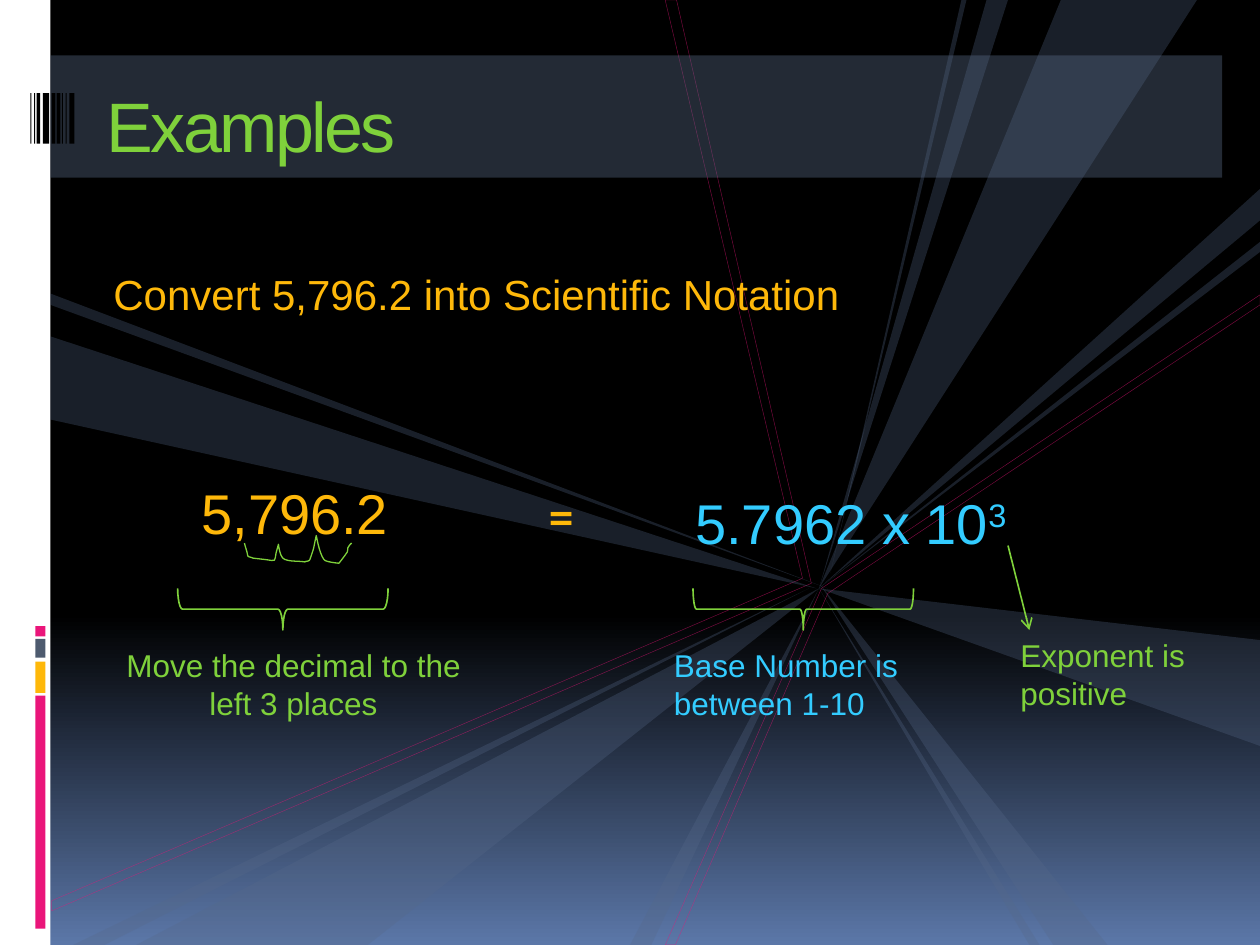
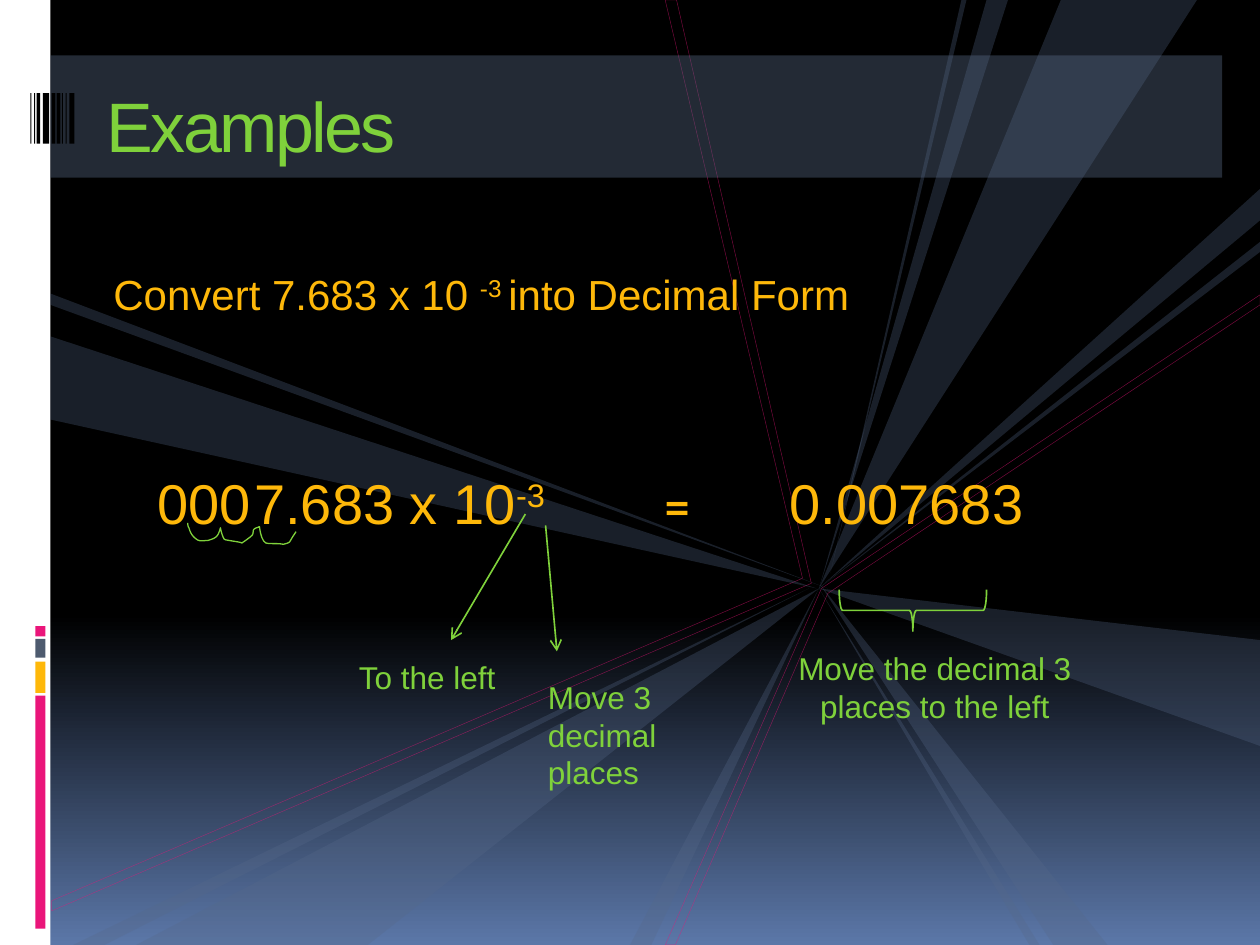
from dataclasses import dataclass

import pptx
import pptx.dml.color
import pptx.enum.shapes
import pptx.enum.text
import pptx.oxml
import pptx.oxml.ns
import pptx.util
from pptx.util import Inches

SHAPE = pptx.enum.shapes.MSO_SHAPE
ALIGN = pptx.enum.text.PP_ALIGN
ANCHOR = pptx.enum.text.MSO_ANCHOR


@dataclass(frozen=True)
class Theme:
    black: str = "000000"
    white: str = "FFFFFF"
    dusk: str = "5B77A8"
    pink: str = "EA157A"
    amber: str = "FEB80A"
    slate: str = "4E5B6F"
    ray: str = "566989"
    band: str = "586A86"
    green: str = "7FD13B"
    sky: str = "33CCFF"
    font: str = "Arial"
    sign_font: str = "Cabin"
    title: int = 40
    number: int = 32
    task: int = 24
    label: int = 18


THEME = Theme()
HUB = (6.5, 4.67)
# The two outer points of each wedge of light, then the point it narrows to
RAYS = [
    ((7.67, 0), (7.63, 0), (6.59, 4.55)),
    ((8.42, 0), (9.5, 0), HUB),
    ((10, 5.08), (10, 5.92), HUB),
    ((8, 0), (7.83, 0), HUB),
    ((8.36, 7.5), (8.79, 7.5), (6.51, 4.64)),
    ((8.25, 7.5), (8.17, 7.5), HUB),
    ((10, 1.5), (10, 1.75), HUB),
    ((10, 1.92), (10, 2), HUB),
    ((1.08, 7.5), (2.92, 7.5), HUB),
    ((0.58, 7.5), (0.83, 7.5), (6.42, 4.67)),
    ((0.4, 2.67), (0.4, 3.33), (6.48, 4.67)),
    ((0.4, 2.33), (0.4, 2.42), (6.57, 4.67)),
    ((5, 7.5), (5.17, 7.5), HUB),
]
PINK_OUTLINES = [
    [(5.28, 7.5), (6.52, 4.67), (10, 2.34), (10, 2.42), (6.57, 4.71), (5.36, 7.5)],
    [(0.41, 7.15), (0.41, 7.23), (6.44, 4.63), (5.37, 0), (5.28, 0), (6.37, 4.59)],
]
SIDE_BLOCKS = [  # top, height, colour
    (5.52, 1.85, THEME.pink),
    (5.25, 0.25, THEME.amber),
    (5.07, 0.15, THEME.slate),
    (4.97, 0.08, THEME.pink),
]
BARCODE = [  # left, width
    (0.24, 0.01), (0.27, 0.01), (0.29, 0.03), (0.34, 0.05), (0.41, 0.03),
    (0.45, 0.03), (0.49, 0.01), (0.52, 0.01), (0.55, 0.04),
]
# Bezier chains: a start point, then three points for each curve
HOPS_LEFT = [
    (2.79, 4.31), (2.78, 4.32), (2.77, 4.33), (2.76, 4.35),
    (2.76, 4.36), (2.76, 4.38), (2.75, 4.39), (2.73, 4.42), (2.69, 4.47), (2.69, 4.47),
    (2.68, 4.47), (2.58, 4.46), (2.57, 4.44), (2.54, 4.4), (2.52, 4.3), (2.51, 4.25),
    (2.48, 4.39), (2.5, 4.32), (2.46, 4.44), (2.45, 4.46), (2.43, 4.45), (2.42, 4.46),
    (2.37, 4.45), (2.31, 4.46), (2.26, 4.44), (2.22, 4.43), (2.21, 4.32), (2.21, 4.32),
    (2.15, 4.49), (2.25, 4.45), (2.01, 4.43), (1.96, 4.41), (1.97, 4.43), (1.96, 4.38),
    (1.95, 4.35), (1.94, 4.31), (1.94, 4.31),
]
HOPS_ZEROS = [
    (2.35, 4.22), (2.28, 4.32), (2.32, 4.3), (2.25, 4.32),
    (2.2, 4.31), (2.15, 4.32), (2.11, 4.31), (2.07, 4.29), (2.06, 4.18), (2.06, 4.18),
    (2.04, 4.19), (2.02, 4.19), (2.01, 4.21), (2.01, 4.22), (2.01, 4.24), (2, 4.25),
    (1.98, 4.27), (1.92, 4.31), (1.92, 4.31), (1.91, 4.3), (1.79, 4.29), (1.78, 4.28),
    (1.76, 4.25), (1.75, 4.19), (1.75, 4.19), (1.73, 4.26), (1.72, 4.27), (1.65, 4.29),
    (1.62, 4.29), (1.58, 4.3), (1.56, 4.28), (1.53, 4.26), (1.51, 4.23), (1.5, 4.19),
    (1.49, 4.18), (1.49, 4.15), (1.49, 4.15),
]


def rgb(code):
    return pptx.dml.color.RGBColor.from_string(code)


def add_child(parent, tag, **attributes):
    child = pptx.oxml.parse_xml(f"<{tag} {pptx.oxml.ns.nsdecls('a')}/>")
    for name, value in attributes.items():
        child.set(name, str(value))
    parent.append(child)


def set_opacity(parent, percent):
    """Make the one solid colour found under parent translucent."""
    color = next(parent.iter(pptx.oxml.ns.qn("a:srgbClr")))
    add_child(color, "a:alpha", val=percent * 1000)


def curve_points(chain, steps=6):
    """Return points along a chain of cubic Bezier curves."""
    points = [chain[0]]
    for first in range(0, len(chain) - 1, 3):
        a, b, c, d = chain[first:first + 4]
        for step in range(1, steps + 1):
            t = step / steps
            u = 1 - t
            weights = (u ** 3, 3 * u * u * t, 3 * u * t * t, t ** 3)
            points.append(tuple(
                sum(weight * value for weight, value in zip(weights, axis))
                for axis in zip(a, b, c, d)))
    return points


class SlideBuilder:
    def __init__(self, deck, theme):
        self.deck = deck
        self.theme = theme
        self.page = None

    def paint_background(self):
        fill = self.deck.slide_master.background.fill
        fill.gradient()
        fill.gradient_angle = 270
        stops = ((0.65, self.theme.black), (1, self.theme.dusk))
        for stop, (position, color) in zip(fill.gradient_stops, stops):
            stop.position = position
            stop.color.rgb = rgb(color)

    def start_page(self, task):
        """Add a slide with the shared decoration, the title and the task line."""
        theme = self.theme
        self.page = self.deck.slides.add_slide(self.deck.slide_layouts[6])
        self.bar(0, 0, 0.4, 7.5, theme.white)
        for top, height, color in SIDE_BLOCKS:
            self.bar(0.28, top, 0.08, height, color)
        for points in PINK_OUTLINES:
            self.outline(points, theme.pink, 0.25, close=True, opacity=53)
        for points in RAYS:
            self.wedge(points)
        self.bar(0.4, 0.44, 9.3, 0.97, theme.band, opacity=40)
        for left, width in BARCODE:
            self.bar(left, 0.74, width, 0.4, theme.black)

        box = self.text(0.75, 2.08, 8.31, 1.07, task, theme.task, theme.amber)
        box.text_frame.margin_left = Inches(0.15)
        box.text_frame.margin_bottom = 0
        box.text_frame.paragraphs[0].space_before = pptx.util.Pt(7)

        box = self.text(0.75, 0.58, 8.92, 0.85, "Examples", theme.title, theme.green)
        box.text_frame.margin_top = Inches(0.02)
        box.text_frame.vertical_anchor = ANCHOR.MIDDLE
        span = box.text_frame.paragraphs[0].runs[0]
        span._r.get_or_add_rPr().set("spc", "-150")

    def bar(self, left, top, width, height, color, opacity=None):
        shape = self.page.shapes.add_shape(
            SHAPE.RECTANGLE, Inches(left), Inches(top), Inches(width), Inches(height))
        self.paint(shape, color, opacity)

    def paint(self, shape, color, opacity=None):
        shape.shadow.inherit = False
        shape.line.fill.background()
        shape.fill.solid()
        shape.fill.fore_color.rgb = rgb(color)
        if opacity:
            set_opacity(shape._element.spPr, opacity)

    def stroke(self, shape, color, width, opacity=None):
        shape.line.color.rgb = rgb(color)
        shape.line.width = pptx.util.Pt(width)
        if opacity:
            set_opacity(shape._element.spPr, opacity)

    def freeform(self, points, close):
        """Build an outline; the builder keeps whole units only, so use Inches."""
        start, *rest = [(Inches(x), Inches(y)) for x, y in points]
        builder = self.page.shapes.build_freeform(*start)
        builder.add_line_segments(rest, close=close)
        return builder.convert_to_shape()

    def wedge(self, points):
        self.paint(self.freeform(points, close=True), self.theme.ray, 30)

    def outline(self, points, color, width, close=False, opacity=None):
        shape = self.freeform(points, close)
        shape.shadow.inherit = False
        shape.fill.background()
        self.stroke(shape, color, width, opacity)

    def hops(self, chain):
        """Draw the hand-made loops that count the decimal places."""
        self.outline(curve_points(chain), self.theme.green, 0.75)

    def brace(self, left, top, width, curl=0.083):
        """Draw a brace that opens upward, given its visible left, top and width."""
        depth = 0.33
        shape = self.page.shapes.add_shape(
            SHAPE.RIGHT_BRACE, Inches(left + (width - depth) / 2),
            Inches(top + (depth - width) / 2), Inches(depth), Inches(width))
        shape.rotation = 90
        shape.adjustments[0] = curl
        shape.shadow.inherit = False
        shape.fill.background()
        self.stroke(shape, self.theme.green, 0.94)

    def arrow(self, start, end):
        connector = self.page.shapes.add_connector(
            pptx.enum.shapes.MSO_CONNECTOR.STRAIGHT,
            *(Inches(value) for value in (*start, *end)))
        self.stroke(connector, self.theme.green, 0.94)
        add_child(connector.line._get_or_add_ln(), "a:tailEnd", type="arrow")
        add_child(connector._element.spPr, "a:effectLst")

    def text(self, left, top, width, height, content, size, color,
             align=ALIGN.LEFT, font=None):
        """Add one paragraph; every second part of a list is superscript."""
        box = self.page.shapes.add_textbox(
            Inches(left), Inches(top), Inches(width), Inches(height))
        box.text_frame.word_wrap = True
        para = box.text_frame.paragraphs[0]
        para.alignment = align
        para.font.name = font or self.theme.font
        para.font.size = pptx.util.Pt(size)
        para.font.color.rgb = rgb(color)
        parts = [content] if isinstance(content, str) else content
        for index, part in enumerate(parts):
            span = para.add_run()
            span.text = part
            if index % 2:
                span._r.get_or_add_rPr().set("baseline", "30000")
        return box

    def number(self, left, top, width, content, color=None, align=ALIGN.LEFT):
        self.text(left, top, width, 0.64, content, self.theme.number,
                  color or self.theme.amber, align)

    def equals(self, left, top):
        self.text(left, top, 1.25, 0.64, "=", self.theme.number, self.theme.amber,
                  ALIGN.CENTER, self.theme.sign_font)

    def label(self, left, top, width, height, content, color=None, align=ALIGN.LEFT):
        self.text(left, top, width, height, content, self.theme.label,
                  color or self.theme.green, align)


def build_to_scientific(builder):
    sky = builder.theme.sky
    builder.start_page("Convert 5,796.2 into Scientific Notation")
    builder.number(1.5, 3.75, 2.08, "5,796.2")
    builder.equals(3.83, 3.75)
    builder.number(5.42, 3.83, 3.58, ["5.7962 x 10", "3"], sky)
    builder.brace(5.5, 4.67, 1.75)
    builder.label(5.25, 5.08, 2.33, 0.7, "Base Number is between 1-10", sky)
    builder.arrow((8, 4.33), (8.17, 5))
    builder.label(8, 5, 1.75, 0.71, "Exponent is positive")
    builder.brace(1.41, 4.67, 1.67, curl=0.119)
    builder.label(0.83, 5.08, 3, 0.7, "Move the decimal to the left 3 places",
                  align=ALIGN.CENTER)
    builder.hops(HOPS_LEFT)


def build_to_decimal(builder):
    builder.start_page(["Convert 7.683 x 10 ", "-3 ", "into Decimal Form"])
    builder.number(1.92, 3.67, 3.17, ["7.683 x 10", "-3"])
    builder.equals(4.75, 3.67)
    builder.number(6.17, 3.67, 2.67, "0.007683")
    builder.number(0.92, 3.67, 1.17, "000", align=ALIGN.RIGHT)
    builder.brace(6.66, 4.68, 1.17)
    builder.label(5.92, 5.1, 3, 0.7, "Move the decimal 3 places to the left",
                  align=ALIGN.CENTER)
    builder.arrow((4.17, 4.08), (3.58, 5.08))
    builder.label(2.75, 5.17, 1.5, 0.4, "To the left")
    builder.arrow((4.33, 4.17), (4.42, 5.17))
    builder.label(4.25, 5.33, 1.5, 1.01, "Move 3 decimal places")
    builder.hops(HOPS_ZEROS)


def main():
    deck = pptx.Presentation()
    deck.slide_width = Inches(10)
    deck.slide_height = Inches(7.5)
    builder = SlideBuilder(deck, THEME)
    builder.paint_background()
    build_to_scientific(builder)
    build_to_decimal(builder)
    deck.save("out.pptx")


if __name__ == "__main__":
    main()
